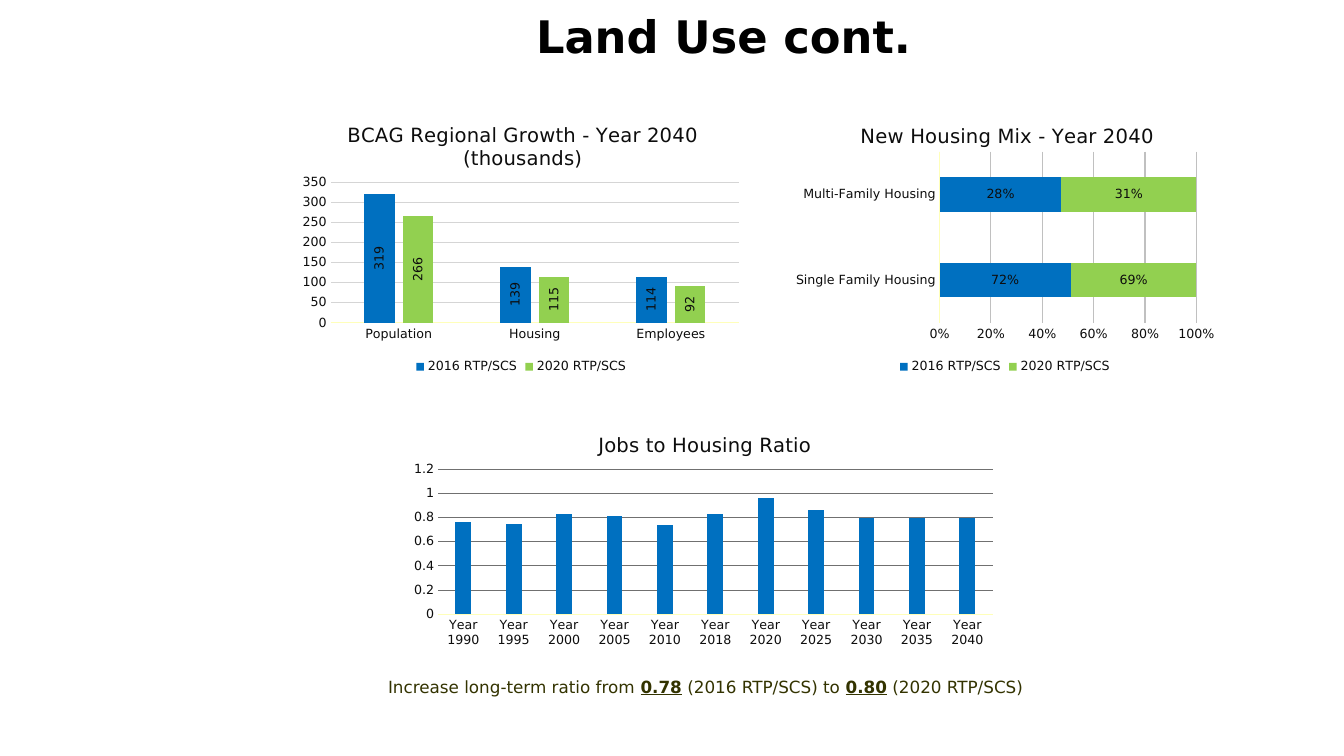
from dataclasses import dataclass

from lxml.etree import SubElement
from pptx import Presentation
from pptx.chart.data import CategoryChartData as ChartData
from pptx.dml.color import RGBColor as Rgb
from pptx.enum.chart import XL_CHART_TYPE as Kind, XL_LABEL_POSITION as LabelPlace
from pptx.enum.chart import XL_LEGEND_POSITION as LegendPlace, XL_TICK_MARK as Tick
from pptx.enum.text import MSO_ANCHOR as Anchor, PP_ALIGN as Align
from pptx.oxml.ns import qn
from pptx.util import Cm, Pt


@dataclass(frozen=True)
class Theme:
    """Colours, font and type sizes of the slide."""
    font: str = "DejaVu Sans"
    heading: str = "000000"
    note: str = "333300"
    chart_text: str = "0D0D0D"
    axis_line: str = "FFFFBA"
    series: tuple = ("0070C0", "92D050")
    heading_size: int = 32
    note_size: int = 12
    chart_title_size: int = 14
    chart_size: int = 10
    label_size: int = 9


class SlideBuilder:
    """Draws text and charts on one slide in one theme."""

    def __init__(self, page, theme):
        self.page, self.theme = page, theme

    def style(self, font, size, color, bold=False):
        font.name, font.size, font.bold = self.theme.font, Pt(size), bold
        font.color.rgb = Rgb.from_string(color)

    def chart_style(self, font):
        self.style(font, self.theme.label_size, self.theme.chart_text)

    def text_box(self, place, anchor):
        frame = self.page.shapes.add_textbox(*map(Cm, place)).text_frame
        frame.word_wrap, frame.vertical_anchor = True, anchor
        return frame.paragraphs[0]

    def heading(self, text, place):
        para = self.text_box(place, Anchor.BOTTOM)
        para.text, para.alignment, para.line_spacing = text, Align.CENTER, 0.9
        self.style(para.font, self.theme.heading_size, self.theme.heading, True)

    def note(self, parts, place):
        para = self.text_box(place, Anchor.TOP)
        for text, strong in parts:
            span = para.add_run()
            span.text = text
            self.style(span.font, self.theme.note_size, self.theme.note, strong)
            span.font.underline = strong

    def lay_out(self, parent, index, **sizes):
        for old in parent.findall(qn("c:layout")):
            parent.remove(old)
        layout = SubElement(parent, qn("c:layout"))
        parent.insert(index, layout)
        manual = SubElement(layout, qn("c:manualLayout"))
        if "w" in sizes:
            SubElement(manual, qn("c:layoutTarget")).set("val", "inner")
        for side in "xy":
            SubElement(manual, qn(f"c:{side}Mode")).set("val", "edge")
        for name, value in sizes.items():
            SubElement(manual, qn(f"c:{name}")).set("val", str(value))

    def axes(self, chart, top, step, grid, number_format):
        for axis in (chart.category_axis, chart.value_axis):
            axis.major_tick_mark = axis.minor_tick_mark = Tick.NONE
            self.chart_style(axis.tick_labels.font)
        line = chart.category_axis.format.line
        line.color.rgb, line.width = Rgb.from_string(self.theme.axis_line), Pt(0.75)
        values = chart.value_axis
        values.minimum_scale, values.maximum_scale, values.major_unit = 0, top, step
        values.format.line.fill.background()
        values.tick_labels.number_format = number_format
        values.tick_labels.number_format_is_linked = False
        line = values.major_gridlines.format.line
        line.color.rgb, line.width = Rgb.from_string(grid), Pt(0.75)

    def labels(self, series, number_format, turned):
        labels = series.data_labels
        labels.show_value, labels.position = True, LabelPlace.CENTER
        labels.number_format, labels.number_format_is_linked = number_format, False
        self.chart_style(labels.font)
        if turned:
            body = labels._element.find(qn("c:txPr")).find(qn("a:bodyPr"))
            body.set("rot", "-5400000")
            body.set("vert", "horz")

    def chart(self, kind, title, place, categories, series, top, step, grid,
              title_at, plot_at, number_format="General", gap=219, overlap=-27,
              turned=False):
        data = ChartData()
        data.categories = categories
        for name, values in series.items():
            data.add_series(name, values)
        chart = self.page.shapes.add_chart(kind, *map(Cm, place), data).chart
        self.style(chart.font, self.theme.chart_size, self.theme.chart_text)

        frame = chart.chart_title.text_frame
        frame.text = title
        for para in frame.paragraphs:
            para.alignment = Align.CENTER
            self.style(para.font, self.theme.chart_title_size, self.theme.chart_text)
        chart.chart_title.include_in_layout = False
        self.lay_out(chart.chart_title._element, 1, **dict(zip("xy", title_at)))
        plot_area = chart._chartSpace.find(qn("c:chart")).find(qn("c:plotArea"))
        self.lay_out(plot_area, 0, **dict(zip("xywh", plot_at)))

        self.axes(chart, top, step, grid, number_format)
        plot = chart.plots[0]
        plot.gap_width, plot.overlap, plot.vary_by_categories = gap, overlap, False
        chart.has_legend = len(series) > 1
        if chart.has_legend:
            chart.legend.position = LegendPlace.BOTTOM
            chart.legend.include_in_layout = False
            self.chart_style(chart.legend.font)
        for bars, color in zip(plot.series, self.theme.series):
            bars.format.fill.solid()
            bars.format.fill.fore_color.rgb = Rgb.from_string(color)
            bars.invert_if_negative = False
            if chart.has_legend:
                self.labels(bars, number_format, turned)


def main():
    deck = Presentation()
    deck.slide_width, deck.slide_height = Cm(33.87), Cm(19.05)
    builder = SlideBuilder(deck.slides.add_slide(deck.slide_layouts[6]), Theme())
    old_plan, new_plan = "2016 RTP/SCS", "2020 RTP/SCS"
    years = (1990, 1995, 2000, 2005, 2010, 2018, 2020, 2025, 2030, 2035, 2040)

    builder.heading("Land Use cont.", (8.26, 0.03, 19.96, 1.7))
    builder.chart(
        Kind.COLUMN_CLUSTERED, "Jobs to Housing Ratio", (10.13, 10.36, 15.19, 6.1),
        [f"Year {year}" for year in years],
        {"Series 1": (0.76, 0.75, 0.83, 0.81, 0.74, 0.83, 0.96, 0.86, 0.8, 0.8, 0.8)},
        top=1.2, step=0.2, grid="707070",
        title_at=(0.32, 0.07), plot_at=(0.06, 0.24, 0.92, 0.6))
    builder.note(
        (("Increase long-term ratio from ", False), ("0.78", True),
         (f" ({old_plan}) to ", False), ("0.80", True), (f" ({new_plan})", False)),
        (9.53, 16.94, 17.15, 0.76))
    builder.chart(
        Kind.BAR_STACKED_100, "New Housing Mix - Year 2040", (19.84, 2.57, 10.97, 6.96),
        ("Single Family Housing", "Multi-Family Housing"),
        {old_plan: (0.72, 0.28), new_plan: (0.69, 0.31)},
        top=1, step=0.2, grid="C0C0C0", number_format="0%", gap=150, overlap=100,
        title_at=(0.16, 0.06), plot_at=(0.35, 0.18, 0.59, 0.62))
    builder.chart(
        Kind.COLUMN_CLUSTERED, "BCAG Regional Growth - Year 2040\n(thousands)",
        (7.42, 2.57, 11.43, 6.96), ("Population", "Housing", "Employees"),
        {old_plan: (319, 139, 114), new_plan: (266, 115, 92)},
        top=350, step=50, grid="D5D5D5", number_format="#,##0", turned=True,
        title_at=(0.11, 0.06), plot_at=(0.08, 0.29, 0.9, 0.51))
    deck.save("out.pptx")


if __name__ == "__main__":
    main()
